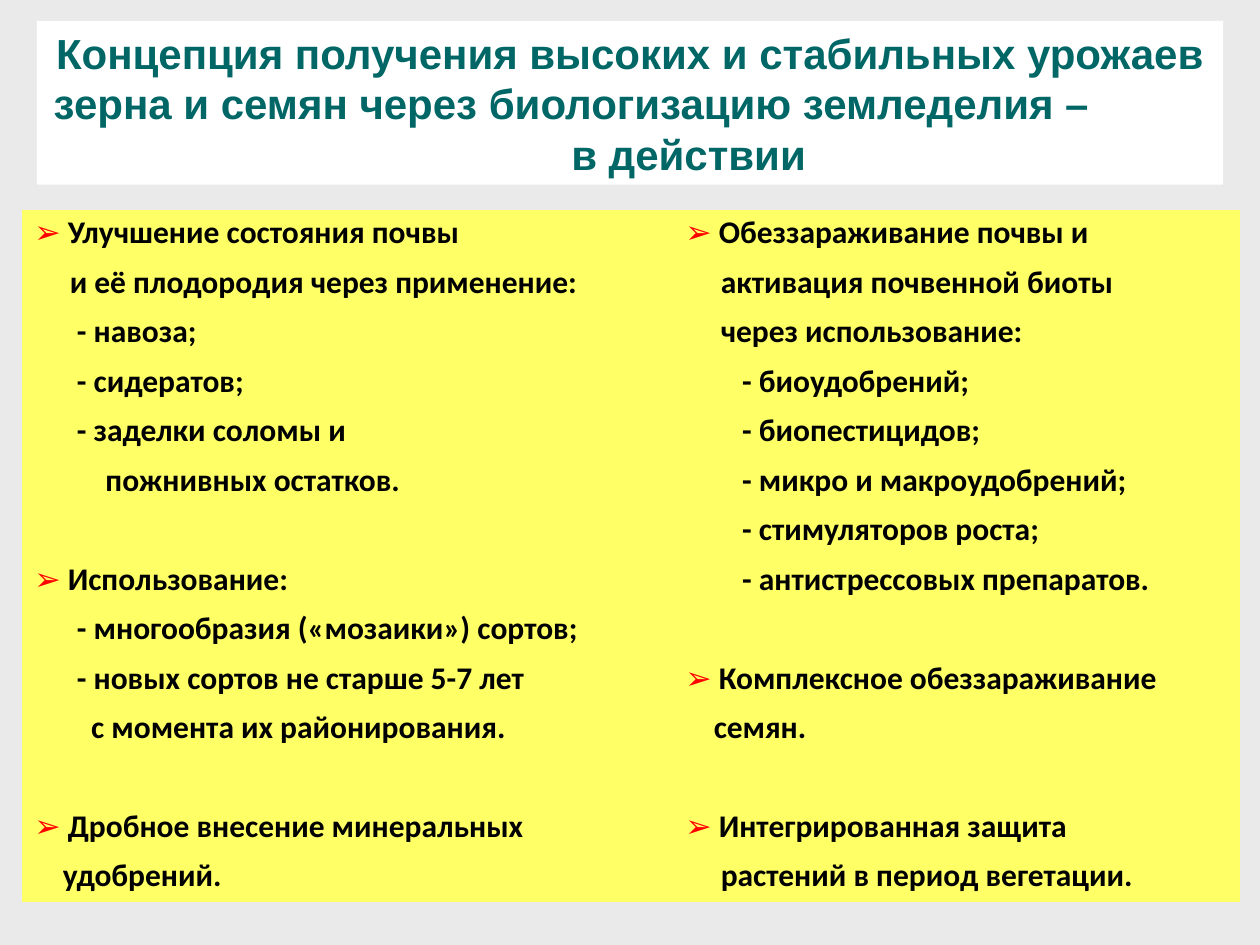
"""Build a slide on biological farming: a title over a two-column table of measures."""
from dataclasses import dataclass

import pptx
import pptx.dml.color
import pptx.enum.text
import pptx.util

Pt = pptx.util.Pt


def rgb(value: str) -> pptx.dml.color.RGBColor:
    """Return the colour for a hex string."""
    return pptx.dml.color.RGBColor.from_string(value)


@dataclass(frozen=True)
class Theme:
    """Colours, fonts and type sizes of the slide."""
    background: str = "EAEAEA"
    title_fill: str = "FFFFFF"
    title_text: str = "006666"
    cell_fill: str = "FFFF66"
    cell_text: str = "000000"
    marker: str = "FF0000"
    title_font: str = "Arial"
    body_font: str = "Calibri"
    title_size: float = 24
    body_size: float = 18
    no_grid_style: str = "{2D5ABB26-0587-4C30-8999-92F81FD0307C}"


@dataclass(frozen=True)
class Measure:
    """One table line: its text, its indent in points, and whether it opens a topic."""
    text: str = ""
    indent: float = 0
    topic: bool = False


@dataclass(frozen=True)
class Heading:
    """One title line with its alignment and left indent in points."""
    text: str
    align: pptx.enum.text.PP_ALIGN
    indent: float = 0


THEME = Theme()
ALIGN = pptx.enum.text.PP_ALIGN
CONTINUED, ITEM, DEEP_ITEM = 20.3, 24.4, 32.5
SHORT, ITEM_CONTINUED = 16.3, 40.7

HEADINGS = [
    Heading("Концепция получения высоких и стабильных урожаев", ALIGN.CENTER),
    Heading("зерна и семян через биологизацию земледелия –", ALIGN.LEFT, 2.5),
    Heading("в действии", ALIGN.CENTER, 67),
]

SOIL = [
    Measure("Улучшение состояния почвы", topic=True),
    Measure("и её плодородия через применение:", CONTINUED),
    Measure("- навоза;", ITEM),
    Measure("- сидератов;", ITEM),
    Measure("- заделки соломы и", ITEM),
    Measure("пожнивных остатков.", ITEM_CONTINUED),
    Measure(),
    Measure("Использование:", topic=True),
    Measure("- многообразия («мозаики») сортов;", ITEM),
    Measure("- новых сортов не старше 5-7 лет", ITEM),
    Measure("с момента их районирования.", DEEP_ITEM),
    Measure(),
    Measure("Дробное внесение минеральных", topic=True),
    Measure("удобрений.", SHORT),
]

PROTECTION = [
    Measure("Обеззараживание почвы и", topic=True),
    Measure("активация почвенной биоты", CONTINUED),
    Measure("через использование:", CONTINUED),
    Measure("- биоудобрений;", DEEP_ITEM),
    Measure("- биопестицидов;", DEEP_ITEM),
    Measure("- микро и макроудобрений;", DEEP_ITEM),
    Measure("- стимуляторов роста;", DEEP_ITEM),
    Measure("- антистрессовых препаратов.", DEEP_ITEM),
    Measure(),
    Measure("Комплексное обеззараживание", topic=True),
    Measure("семян.", SHORT),
    Measure(),
    Measure("Интегрированная защита", topic=True),
    Measure("растений в период вегетации.", CONTINUED),
]


def add_run(paragraph, text: str, font: str, size: float, color: str) -> None:
    """Append one bold run to a paragraph."""
    run = paragraph.add_run()
    run.text = text
    run.font.name = font
    run.font.size = Pt(size)
    run.font.bold = True
    run.font.color.rgb = rgb(color)


def fill_title(title, headings: list[Heading]) -> None:
    """Place the title placeholder and write its lines."""
    title.left, title.top, title.width, title.height = Pt(21), Pt(12), Pt(678), Pt(93.6)
    title.fill.solid()
    title.fill.fore_color.rgb = rgb(THEME.title_fill)
    frame = title.text_frame
    frame.word_wrap = True
    frame.auto_size = pptx.enum.text.MSO_AUTO_SIZE.NONE
    frame.vertical_anchor = pptx.enum.text.MSO_ANCHOR.MIDDLE
    for index, heading in enumerate(headings):
        paragraph = frame.add_paragraph() if index else frame.paragraphs[0]
        paragraph.alignment = heading.align
        paragraph.line_spacing = Pt(29)
        paragraph.space_before = Pt(0)
        paragraph._p.get_or_add_pPr().set("marL", str(Pt(heading.indent)))
        add_run(paragraph, heading.text, THEME.title_font, THEME.title_size, THEME.title_text)


def fill_cell(cell, measure: Measure) -> None:
    """Colour one cell and write its measure."""
    cell.fill.solid()
    cell.fill.fore_color.rgb = rgb(THEME.cell_fill)
    if not measure.text:
        cell.margin_top = cell.margin_bottom = Pt(0)
        return
    cell.margin_left = Pt(7.2 + measure.indent)
    paragraph = cell.text_frame.paragraphs[0]
    paragraph.line_spacing = 0.9
    paragraph.space_before = Pt(3.6)
    if measure.topic:
        add_run(paragraph, "➢", THEME.body_font, THEME.body_size, THEME.marker)
    text = f" {measure.text}" if measure.topic else measure.text
    add_run(paragraph, text, THEME.body_font, THEME.body_size, THEME.cell_text)


def add_measures(slide, columns: list[list[Measure]], widths: list[float]) -> None:
    """Draw the table with one column per list of measures."""
    frame = slide.shapes.add_table(
        len(columns[0]), len(columns), Pt(12.4), Pt(120), Pt(sum(widths)), Pt(396))
    table = frame.table
    table.first_row = table.horz_banding = False
    table._tbl.tblPr[0].text = THEME.no_grid_style
    for column, width in zip(table.columns, widths):
        column.width = Pt(width)
    for column_index, measures in enumerate(columns):
        for row_index, measure in enumerate(measures):
            fill_cell(table.cell(row_index, column_index), measure)


def main() -> None:
    """Build and save the slide."""
    deck = pptx.Presentation()
    deck.slide_width, deck.slide_height = Pt(720), Pt(540)
    slide = deck.slides.add_slide(deck.slide_layouts[5])
    slide.background.fill.solid()
    slide.background.fill.fore_color.rgb = rgb(THEME.background)
    fill_title(slide.shapes.title, HEADINGS)
    add_measures(slide, [SOIL, PROTECTION], [372, 324])
    deck.save("out.pptx")


if __name__ == "__main__":
    main()
